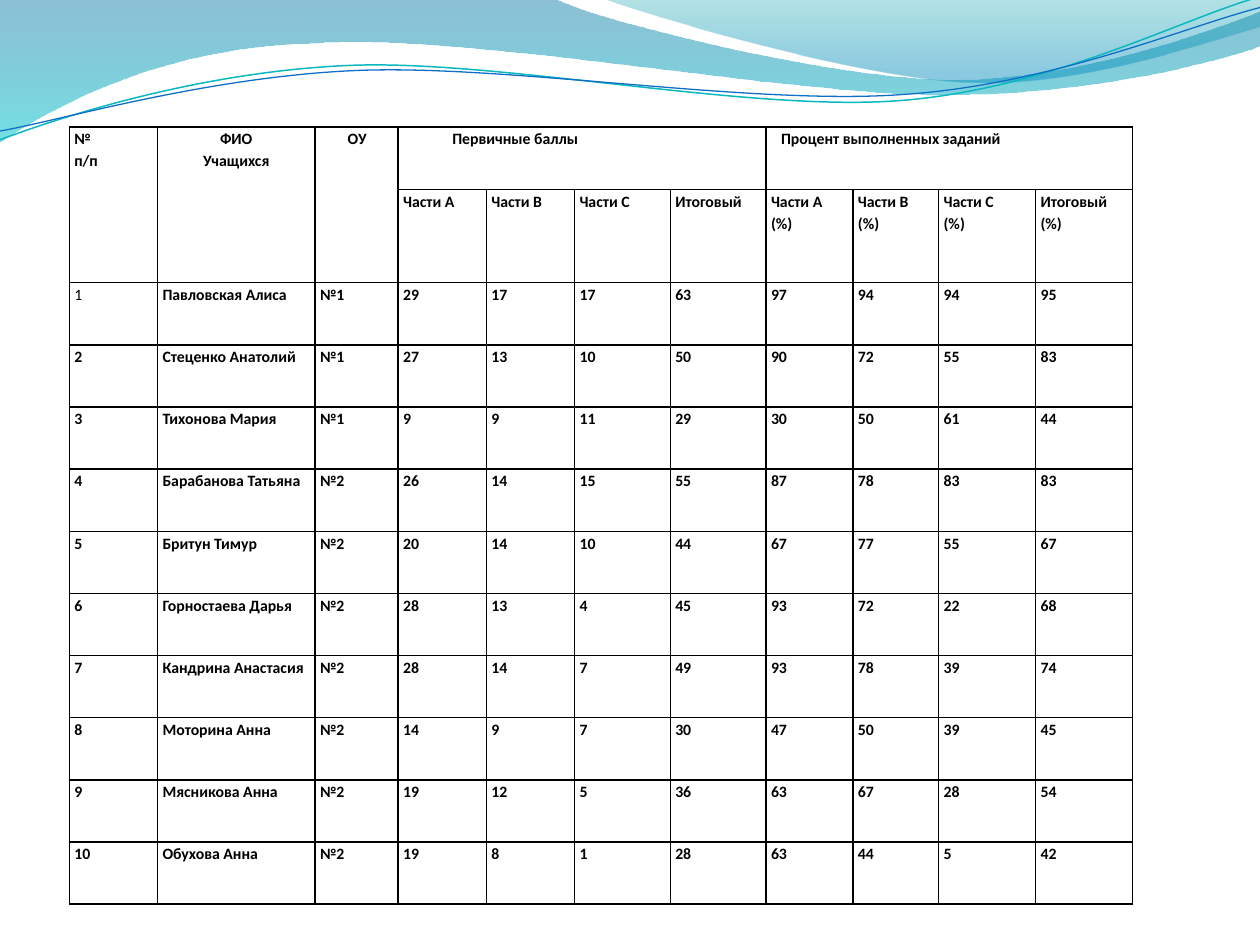
"""Build a slide with a table of pupils' test scores under a wave banner."""
from lxml import etree
from pptx import Presentation, util as u
from pptx.dml.color import RGBColor
from pptx.enum import text
from pptx.oxml.ns import qn

COLORS = {
    "ink": "000000", "teal_line": "0AB8BF", "blue_line": "0F6FC6",
    "steel": "0074A1", "aqua": "00C6CF", "sea": "00A1A9", "azure": "008BBF",
}

WAVES = [
    {"path": [(0, 0), (4.4, -0.01), (4.76, 0.17, 6.64, 0.63, 7.58, 0.63),
              (8.53, 0.63, 9.58, 0.26, 10, 0.09), (10.01, 0.36),
              (9.83, 0.44, 8.7, 0.76, 7.46, 0.75), (6.22, 0.75, 3.82, 0.28, 2.57, 0.34),
              (1.29, 0.36, 0.46, 0.83, -0.01, 1.13), (0, 0)],
     "stops": [(0, "steel", 45), (1, "aqua", 55)]},
    {"path": [(4.79, -0.01), (5.09, 0.11, 6.82, 0.62, 7.69, 0.65),
              (8.56, 0.69, 9.61, 0.32, 10, 0.21), (10, 0), (4.79, -0.01)],
     "stops": [(0, "sea", 30), (0.8, "azure", 45)]},
    {"path": [(0, 1.11), (0.48, 0.93, 1.58, 0.57, 2.77, 0.52),
              (3.95, 0.47, 5.93, 0.89, 7.13, 0.8), (8.33, 0.71, 9.38, 0.15, 9.98, -0.02)],
     "line": ("teal_line", 0.85)},
    {"path": [(0, 1.04), (0.47, 0.96, 1.64, 0.61, 2.83, 0.56),
              (4.03, 0.51, 5.97, 0.84, 7.17, 0.75), (8.36, 0.67, 9.41, 0.21, 10, 0.06)],
     "line": ("blue_line", 0.75)},
]

HEADINGS = [
    {"column": 0, "span": (2, 1), "words": "№\nп/п"},
    {"column": 1, "span": (2, 1), "words": "ФИО\nУчащихся", "align": text.PP_ALIGN.CENTER},
    {"column": 2, "span": (2, 1), "words": "ОУ", "indent": 0.22},
    {"column": 3, "span": (1, 4), "words": "Первичные баллы", "indent": 0.39},
    {"column": 7, "span": (1, 4), "words": "Процент выполненных заданий", "indent": 0.08},
]
PARTS = ["Части А", "Части В", "Части С", "Итоговый"]
PUPILS = [
    ("Павловская Алиса", "№1", 29, 17, 17, 63, 97, 94, 94, 95),
    ("Стеценко Анатолий", "№1", 27, 13, 10, 50, 90, 72, 55, 83),
    ("Тихонова Мария", "№1", 9, 9, 11, 29, 30, 50, 61, 44),
    ("Барабанова Татьяна", "№2", 26, 14, 15, 55, 87, 78, 83, 83),
    ("Бритун Тимур", "№2", 20, 14, 10, 44, 67, 77, 55, 67),
    ("Горностаева Дарья", "№2", 28, 13, 4, 45, 93, 72, 22, 68),
    ("Кандрина Анастасия", "№2", 28, 14, 7, 49, 93, 78, 39, 74),
    ("Моторина Анна", "№2", 14, 9, 7, 30, 47, 50, 39, 45),
    ("Мясникова Анна", "№2", 19, 12, 5, 36, 63, 67, 28, 54),
    ("Обухова Анна", "№2", 19, 8, 1, 28, 63, 44, 5, 42),
]
COLUMN_WIDTHS = [0.7, 1.25, 0.66, 0.7, 0.7, 0.76, 0.76, 0.69, 0.68, 0.77, 0.77]
TABLE_LEFT, TABLE_TOP, TABLE_HEIGHT = 0.55, 1.01, 6.17
PARTS_ROW_RATIO = 1.5


def rgb(name):
    return RGBColor.from_string(COLORS[name])


def add_outline(slide, path, closed):
    """Add a freeform whose six-number segments are cubic curves."""
    points = [(u.Inches(x), u.Inches(y)) for segment in path
              for x, y in zip(segment[::2], segment[1::2])]
    builder = slide.shapes.build_freeform(*points[0])
    builder.add_line_segments(points[1:], close=closed)
    outline = builder.convert_to_shape()
    steps = iter(list(outline._element.iter(qn("a:lnTo"))))
    for segment in path[1:]:
        first = next(steps)
        if len(segment) == 6:
            first.tag = qn("a:cubicBezTo")
            for step in (next(steps), next(steps)):
                first.append(step[0])
                step.getparent().remove(step)
    return outline


def draw_wave(slide, path, stops=None, line=None):
    wave = add_outline(slide, path, closed=bool(stops))
    wave.shadow.inherit = False
    if line:
        wave.fill.background()
        wave.line.color.rgb = rgb(line[0])
        wave.line.width = u.Pt(line[1])
        return
    wave.line.fill.background()
    wave.fill.gradient()
    wave.fill.gradient_angle = 270
    for stop, (position, color, _) in zip(wave.fill.gradient_stops, stops):
        stop.position = position
        stop.color.rgb = rgb(color)
    tints = wave._element.spPr.iter(qn("a:srgbClr"))
    for tint, (_, _, opacity) in zip(tints, stops):
        etree.SubElement(tint, qn("a:alpha"), val=str(opacity * 1000))


def style_cell(cell):
    properties = cell._tc.get_or_add_tcPr()
    for side in ("lnL", "lnR", "lnT", "lnB"):
        border = etree.SubElement(properties, qn(f"a:{side}"), w=str(u.Pt(1)))
        ink = etree.SubElement(border, qn("a:solidFill"))
        etree.SubElement(ink, qn("a:srgbClr"), val=COLORS["ink"])
    cell.fill.background()


def write(cell, words, bold=True, align=None, indent=0):
    cell.margin_left = cell.margin_right = u.Inches(0.04)
    cell.margin_top = cell.margin_bottom = 0
    cell.text_frame.text = str(words)
    for paragraph in cell.text_frame.paragraphs:
        paragraph.line_spacing = 1.15
        paragraph.alignment = align
        if indent:
            paragraph._p.get_or_add_pPr().set("marL", str(u.Inches(indent)))
        for run in paragraph.runs:
            run.font.name, run.font.size = "Calibri", u.Pt(9)
            run.font.bold = bold
            run.font.color.rgb = rgb("ink")


def draw_scores(slide):
    row_count = len(PUPILS) + 2
    scores = slide.shapes.add_table(
        row_count, len(COLUMN_WIDTHS), u.Inches(TABLE_LEFT), u.Inches(TABLE_TOP),
        u.Inches(sum(COLUMN_WIDTHS)), u.Inches(TABLE_HEIGHT)).table
    scores.first_row = scores.horz_banding = False
    for column, width in zip(scores.columns, COLUMN_WIDTHS):
        column.width = u.Inches(width)
    row_height = TABLE_HEIGHT / (row_count - 1 + PARTS_ROW_RATIO)
    for index, row in enumerate(scores.rows):
        row.height = u.Inches(row_height * (PARTS_ROW_RATIO if index == 1 else 1))
    for cell in scores.iter_cells():
        style_cell(cell)

    for heading in HEADINGS:
        column, (down, across) = heading["column"], heading["span"]
        cell = scores.cell(0, column)
        cell.merge(scores.cell(down - 1, column + across - 1))
        write(cell, heading["words"], align=heading.get("align"),
              indent=heading.get("indent", 0))
    for column, part in enumerate(PARTS + [f"{part}\n(%)" for part in PARTS], 3):
        write(scores.cell(1, column), part)
    for number, pupil in enumerate(PUPILS, 1):
        for column, value in enumerate((number, *pupil)):
            write(scores.cell(number + 1, column), value, bold=(number, column) != (1, 0))


def main():
    deck = Presentation()
    deck.slide_width, deck.slide_height = u.Inches(10), u.Inches(7.5)
    slide = deck.slides.add_slide(deck.slide_layouts[6])
    for wave in WAVES:
        draw_wave(slide, **wave)
    draw_scores(slide)
    deck.save("out.pptx")


if __name__ == "__main__":
    main()
